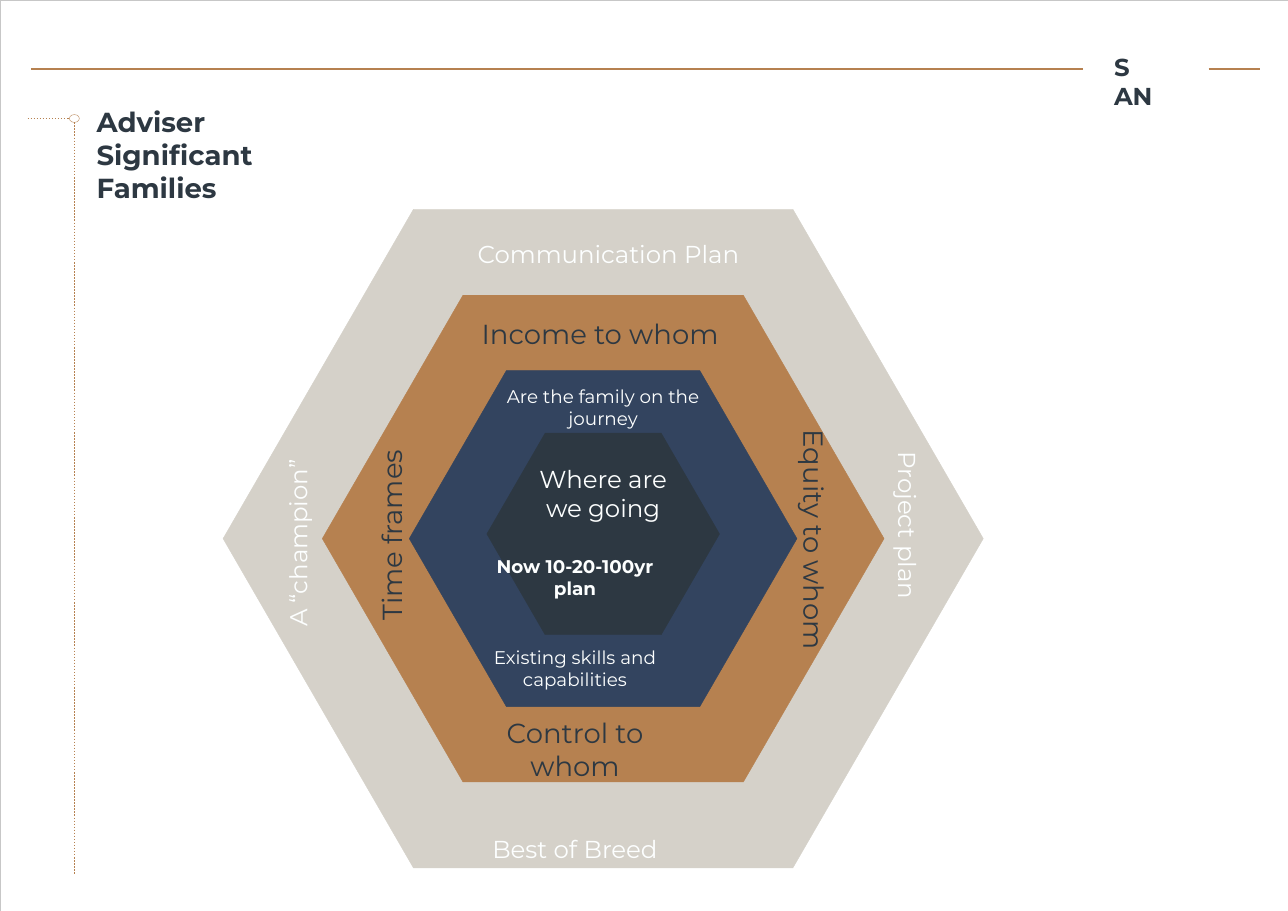
import pptx
import pptx.util
import pptx.dml.color
import pptx.enum.dml
import pptx.enum.shapes
import pptx.enum.text
import pptx.oxml.ns
import lxml.etree

SLIDE_WIDTH = pptx.util.Inches(11.69)
SLIDE_HEIGHT = pptx.util.Inches(8.27)
FONT = "Montserrat"
INK, COPPER, NAVY, STONE = "2D3842", "B68150", "33445F", "D5D1C9"
PALE, EDGE = "FDFFFF", "C7C7C7"

RINGS = [(100, 50, STONE), (73.9, 50, COPPER), (51, 50, NAVY), (30.6, 49.3, INK)]
HEXAGON_INSET = 0.289

LABELS = [
    ("Communication Plan", 50.7, 6.7, 16, PALE, False, None),
    ("Income to whom", 49.6, 18.9, 18, INK, False, None),
    ("Equity to whom", 77.8, 50.2, 18, INK, False, "vert"),
    ("Time frames", 22.1, 49.5, 18, INK, False, "vert270"),
    ("A “champion”", 9.8, 50.7, 16, PALE, False, "vert270"),
    ("Are the family on the\vjourney", 50, 30.1, 12, PALE, False, None),
    ("Where are\vwe going", 50, 43.1, 16, PALE, False, None),
    ("Now 10-20-100yr\nplan", 46.3, 55.9, 12, PALE, True, None),
    ("Existing skills and\ncapabilities", 46.3, 69.6, 12, PALE, False, None),
    ("Control to\vwhom", 46.3, 81.9, 18, INK, False, None),
    ("Best of Breed", 46.3, 97, 16, PALE, False, None),
    ("Project plan", 90.1, 48, 16, PALE, False, "vert"),
]


def rgb(code):
    """Turn a hex string into a colour."""
    return pptx.dml.color.RGBColor.from_string(code)


def within(box, left, top, width, height):
    """Resolve percentages of a box to slide lengths."""
    box_left, box_top, box_width, box_height = box
    return (
        round(box_left + box_width * left / 100),
        round(box_top + box_height * top / 100),
        round(box_width * width / 100),
        round(box_height * height / 100),
    )


def add_rule(page, box, start, end, dash=None):
    """Draw a copper line between two points of a box."""
    x1, y1, _, _ = within(box, *start, 0, 0)
    x2, y2, _, _ = within(box, *end, 0, 0)
    straight = pptx.enum.shapes.MSO_CONNECTOR.STRAIGHT
    rule = page.shapes.add_connector(straight, x1, y1, x2, y2)
    rule.line.color.rgb = rgb(COPPER)
    rule.line.width = pptx.util.Pt(1)
    if dash:
        rule.line.dash_style = dash
    properties = rule._element.spPr
    lxml.etree.SubElement(properties, pptx.oxml.ns.qn("a:effectLst"))


def add_outline(page, kind, area, line, fill=None):
    """Add a thinly outlined preset shape."""
    shape = page.shapes.add_shape(kind, *area)
    shape.shadow.inherit = False
    shape.line.color.rgb = rgb(line)
    shape.line.width = pptx.util.Pt(0.25)
    if fill:
        shape.fill.solid()
        shape.fill.fore_color.rgb = rgb(fill)
    else:
        shape.fill.background()
    return shape


def write(shape, text, size, color, bold, align, anchor):
    """Fill a text shape with uniformly formatted paragraphs."""
    frame = shape.text_frame
    frame.word_wrap = True
    frame.auto_size = pptx.enum.text.MSO_AUTO_SIZE.NONE
    frame.vertical_anchor = anchor
    frame.margin_left = frame.margin_right = 0
    frame.margin_top = frame.margin_bottom = 0
    frame.text = text
    for para in frame.paragraphs:
        para.alignment = align
        para.line_spacing = 1.0
        para.font.name = FONT
        para.font.size = pptx.util.Pt(size)
        para.font.bold = bold
        para.font.color.rgb = rgb(color)


def add_header(page, box):
    """Place the broken top rule and the short mark in its gap."""
    add_rule(page, box, (0, 29), (85.6, 29))
    add_rule(page, box, (95.8, 29), (100, 29))
    mark = page.shapes.add_textbox(*within(box, 88.1, 2, 5.1, 98))
    write(mark, "S\vAN", 16, INK, True,
          pptx.enum.text.PP_ALIGN.LEFT, pptx.enum.text.MSO_ANCHOR.TOP)


def add_title(page, box):
    """Move and format the title placeholder."""
    title = page.shapes.title
    title.left, title.top, title.width, title.height = within(box, 0, 0, 100, 100)
    write(title, "Adviser\nSignificant\vFamilies", 18, INK, True,
          pptx.enum.text.PP_ALIGN.LEFT, pptx.enum.text.MSO_ANCHOR.TOP)


def add_timeline(page, box):
    """Draw the dotted margin lines that meet at a small ring."""
    dots = pptx.enum.dml.MSO_LINE.ROUND_DOT
    add_rule(page, box, (0, 0.51), (80.85, 0.51), dots)
    oval = pptx.enum.shapes.MSO_SHAPE.OVAL
    add_outline(page, oval, within(box, 80.85, 0, 19.15, 1.02), COPPER)
    add_rule(page, box, (90.4, 1.02), (90.4, 100), dots)


def add_label(page, box, text, x, y, size, color, bold, direction):
    """Centre a label, upright or turned, on a point of a box."""
    width, height = (4.8, 40) if direction else (40, 11)
    area = within(box, x - width / 2, y - height / 2, width, height)
    label = page.shapes.add_textbox(*area)
    write(label, text, size, color, bold,
          pptx.enum.text.PP_ALIGN.CENTER, pptx.enum.text.MSO_ANCHOR.MIDDLE)
    if direction:
        label._element.txBody.bodyPr.set("vert", direction)


def add_hexagons(page, box):
    """Nest the hexagons and set their labels."""
    kind = pptx.enum.shapes.MSO_SHAPE.HEXAGON
    for scale, middle, color in RINGS:
        area = within(box, 50 - scale / 2, middle - scale / 2, scale, scale)
        ring = add_outline(page, kind, area, color, color)
        ring.adjustments[0] = HEXAGON_INSET
    for label in LABELS:
        add_label(page, box, *label)


def main():
    """Build the slide and save it."""
    deck = pptx.Presentation()
    deck.slide_width, deck.slide_height = SLIDE_WIDTH, SLIDE_HEIGHT
    page = deck.slides.add_slide(deck.slide_layouts[5])
    whole = (0, 0, SLIDE_WIDTH, SLIDE_HEIGHT)
    add_outline(page, pptx.enum.shapes.MSO_SHAPE.RECTANGLE, whole, EDGE)
    add_header(page, within(whole, 2.4, 5.56, 95.46, 7))
    add_title(page, within(whole, 7.5, 11.5, 21.9, 12.5))
    add_timeline(page, within(whole, 2.14, 12.58, 4.02, 83.31))
    add_hexagons(page, within(whole, 17.32, 22.97, 59.02, 72.31))
    deck.save("out.pptx")


if __name__ == "__main__":
    main()
